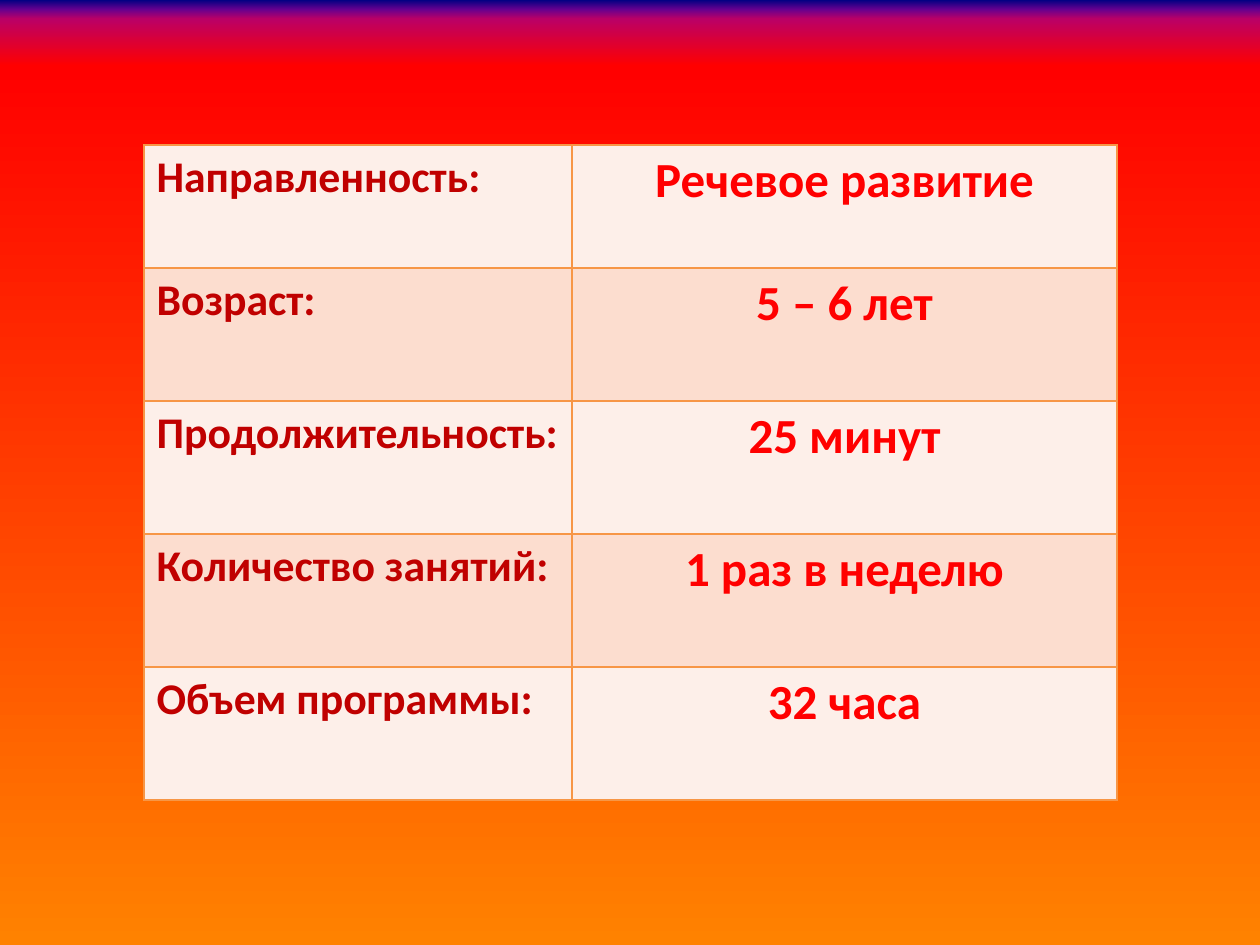
"""Build a slide with a table of programme facts on a fiery gradient."""
from lxml import etree
from pptx import Presentation, util as u
from pptx.dml.color import RGBColor
from pptx.enum import text
from pptx.oxml.ns import qn

SCALE = 914400 / 126
DARK_RED = RGBColor(0xC0, 0x00, 0x00)
RED = RGBColor(0xFF, 0x00, 0x00)
ORANGE = RGBColor(0xF7, 0x96, 0x46)
BANDS = (RGBColor(0xFD, 0xEF, 0xE9), RGBColor(0xFC, 0xDD, 0xCF))
SKY = (
    (0, RGBColor(0x00, 0x00, 0x82)),
    (1, RGBColor(0x66, 0x00, 0x8F)),
    (2, RGBColor(0xBA, 0x00, 0x66)),
    (7, RED),
    (100, RGBColor(0xFF, 0x82, 0x00)),
)
FACTS = (
    ("Направленность:", "Речевое развитие"),
    ("Возраст:", "5 – 6 лет"),
    ("Продолжительность:", "25 минут"),
    ("Количество занятий:", "1 раз в неделю"),
    ("Объем программы:", "32 часа"),
)
COL_WIDTHS = (428, 545)
ROW_HEIGHTS = (123, 133, 133, 133, 133)
COL_FORMATS = (
    {"size": 25, "color": DARK_RED, "align": text.PP_ALIGN.LEFT},
    {"size": 28, "color": RED, "align": text.PP_ALIGN.CENTER},
)


def px(n):
    return u.Emu(round(n * SCALE))


def write(tf, words, size, color, align, font="Calibri", bold=True):
    p = tf.paragraphs[0]
    p.alignment = align
    r = p.add_run()
    r.text = words
    r.font.name, r.font.size, r.font.bold = font, u.Pt(size), bold
    r.font.color.rgb = color


def add_color(parent, color):
    etree.SubElement(parent, qn("a:srgbClr"), val=str(color))


class Deck:
    def __init__(self, slide, border=ORANGE, border_pt=1):
        self.slide = slide
        self.border = border
        self.border_pt = border_pt

    def background(self, stops):
        fill = self.slide.background.fill
        fill.gradient()
        fill.gradient_angle = 270
        gs_list = next(self.slide.element.iter(qn("a:gsLst")))
        for gs in list(gs_list):
            gs_list.remove(gs)
        for percent, color in stops:
            gs = etree.SubElement(gs_list, qn("a:gs"), pos=str(percent * 1000))
            add_color(gs, color)

    def outline(self, cell):
        tc_pr = cell._tc.get_or_add_tcPr()
        for i, side in enumerate("LRTB"):
            ln = etree.Element(qn(f"a:ln{side}"), w=str(u.Pt(self.border_pt)))
            add_color(etree.SubElement(ln, qn("a:solidFill")), self.border)
            tc_pr.insert(i, ln)

    def table(self, x, y, widths, heights, rows, formats, bands):
        frame = self.slide.shapes.add_table(
            len(heights), len(widths), px(x), px(y), px(sum(widths)), px(sum(heights)))
        tbl = frame.table
        tbl.first_row = False
        for col, width in zip(tbl.columns, widths):
            col.width = px(width)
        for i, (row, height, words) in enumerate(zip(tbl.rows, heights, rows)):
            row.height = px(height)
            for cell, word, fmt in zip(row.cells, words, formats):
                write(cell.text_frame, word, **fmt)
                cell.fill.solid()
                cell.fill.fore_color.rgb = bands[i % len(bands)]
                self.outline(cell)


def main():
    prs = Presentation()
    prs.slide_width, prs.slide_height = px(1260), px(945)
    deck = Deck(prs.slides.add_slide(prs.slide_layouts[6]))
    deck.background(SKY)
    deck.table(144, 145, COL_WIDTHS, ROW_HEIGHTS, FACTS, COL_FORMATS, BANDS)
    prs.save("out.pptx")


if __name__ == "__main__":
    main()
